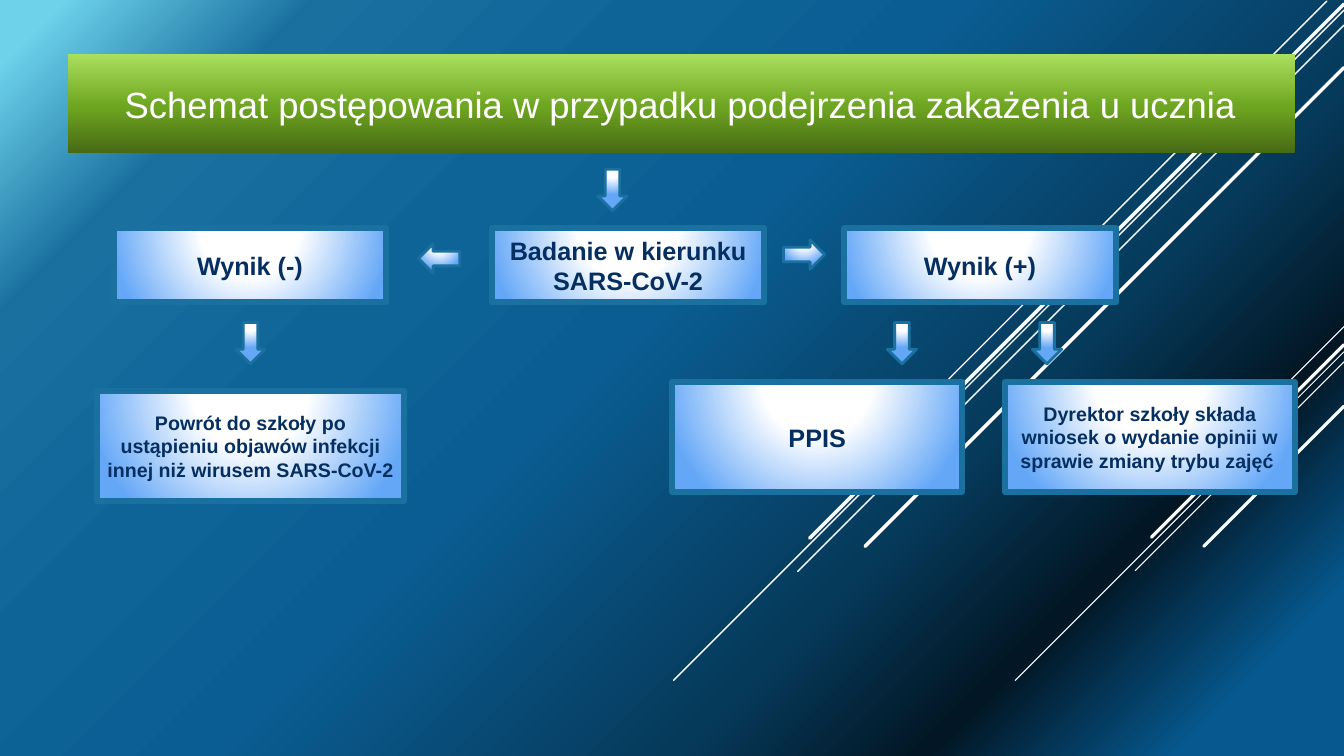
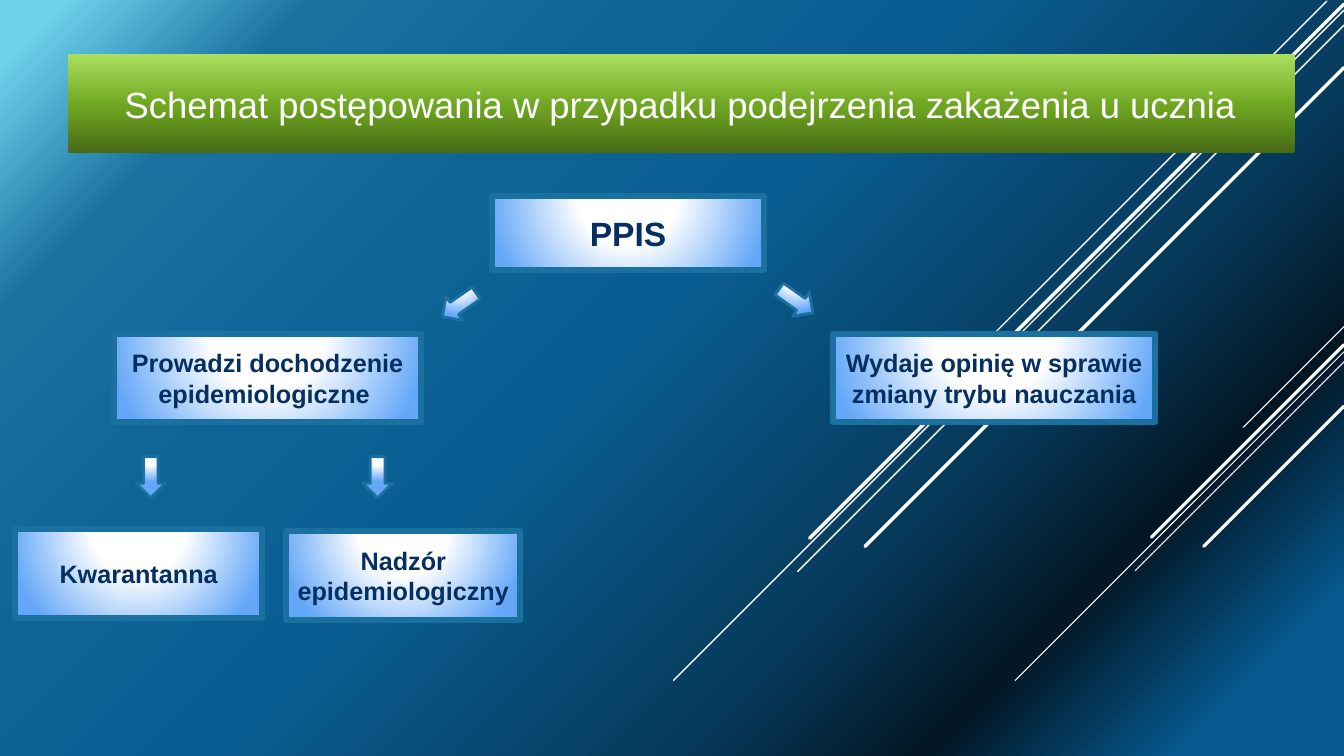
from lxml import etree
from pptx import Presentation
from pptx.dml.color import RGBColor
from pptx.enum.shapes import MSO_CONNECTOR, MSO_SHAPE
from pptx.enum.text import MSO_ANCHOR, MSO_AUTO_SIZE, PP_ALIGN
from pptx.oxml import parse_xml
from pptx.oxml.ns import nsdecls, qn
from pptx.util import Inches, Pt

STRAIGHT = MSO_CONNECTOR.STRAIGHT
RECTANGLE = MSO_SHAPE.RECTANGLE
RIGHT_ARROW = MSO_SHAPE.RIGHT_ARROW
MIDDLE = MSO_ANCHOR.MIDDLE
NO_AUTOFIT = MSO_AUTO_SIZE.NONE
CENTER = PP_ALIGN.CENTER

FONT = "Arial"
COLORS = {"white": "FFFFFF", "navy": "052F61", "border": "1A71A0"}
BACKGROUND_STOPS = [(8, "06588E"), (20, "021624"), (32, "063A5B"), (54, "0A5D92"),
                    (68, "0F6497"), (85, "1A71A0"), (97, "6ED2EB")]
BOX_STOPS = [(0, "FFFFFF"), (35, "FFFFFF"), (100, "64A7F7")]
TITLE_STOPS = [(0, "476A15"), (48, "6FA621"), (100, "AADF5E")]
TITLE = "Schemat postępowania w przypadku podejrzenia zakażenia u ucznia"
RIGHT, DOWN, LEFT = 0, 90, 180

STRIPES = [
    (13.33, 3.24, 1, 0.75), (13.33, 3.49, 3.26, 0.75), (13.33, 3.59, 2.07, 0.75),
    (13.33, 3.42, 1.91, 2.25), (13.33, 4.03, 1.39, 2.25),
    (13.16, 0.01, 4.16, 1), (13.33, 0.1, 6.65, 1), (13.33, 0.25, 5.42, 1),
    (13.33, 0.04, 5.3, 2.5), (13.33, 0.67, 4.75, 2.5),
]

TEST_BOXES = [
    ("Badanie w kierunku SARS-CoV-2", 4.88, 2.26, 2.7, 0.74, 18),
    ("Wynik (+)", 8.37, 2.26, 2.7, 0.74, 18),
    ("Wynik (-)", 1.13, 2.26, 2.7, 0.74, 18),
    ("Powrót do szkoły po ustąpieniu objawów infekcji innej niż wirusem SARS-CoV-2",
     0.96, 3.88, 3.05, 1.09, 14),
    ("Dyrektor szkoły składa wniosek o wydanie opinii w sprawie zmiany trybu zajęć ",
     9.97, 3.79, 2.87, 1.09, 14),
    ("PPIS", 6.67, 3.79, 2.87, 1.09, 18),
]
TEST_ARROWS = [(5.87, 1.74, DOWN), (4.15, 2.42, LEFT), (7.77, 2.38, RIGHT),
               (2.28, 3.26, DOWN), (8.74, 3.26, DOWN), (10.18, 3.26, DOWN)]

INSPECTION_BOXES = [
    ("PPIS", 4.88, 1.94, 2.7, 0.74, 24),
    ("Prowadzi dochodzenie epidemiologiczne ", 1.13, 3.31, 3.05, 0.88, 18),
    ("Wydaje opinię w sprawie zmiany trybu nauczania", 8.26, 3.31, 3.2, 0.88, 18),
    ("Kwarantanna", 0.15, 5.25, 2.45, 0.88, 18),
    ("Nadzór epidemiologiczny", 2.84, 5.27, 2.32, 0.88, 18),
]
INSPECTION_ARROWS = [(4.35, 2.88, 145.1), (7.69, 2.84, 35.2),
                     (1.29, 4.59, DOWN), (3.54, 4.59, DOWN)]


def color(name):
    return RGBColor.from_string(COLORS[name])


def linear(degrees):
    return f'<a:lin ang="{degrees * 60000}" scaled="0"/>'


def radial(left, top, right, bottom):
    return (f'<a:path path="circle"><a:fillToRect l="{left * 1000}" t="{top * 1000}" '
            f'r="{right * 1000}" b="{bottom * 1000}"/></a:path>')


def set_gradient(fill, properties, stops, shade):
    fill.solid()
    marks = "".join(f'<a:gs pos="{position * 1000}"><a:srgbClr val="{value}"/></a:gs>'
                    for position, value in stops)
    gradient = parse_xml(f'<a:gradFill {nsdecls("a")} rotWithShape="0">'
                         f'<a:gsLst>{marks}</a:gsLst>{shade}</a:gradFill>')
    properties.replace(properties.find(qn("a:solidFill")), gradient)


def write_text(shape, text, size, color_name, bold):
    frame = shape.text_frame
    frame.word_wrap = True
    frame.auto_size = NO_AUTOFIT
    frame.vertical_anchor = MIDDLE
    frame.margin_left = frame.margin_right = Inches(0.08)
    para = frame.paragraphs[0]
    para.alignment = CENTER
    span = para.add_run()
    span.text = text
    span.font.name = FONT
    span.font.size = Pt(size)
    span.font.bold = bold
    span.font.color.rgb = color(color_name)


def style_master(master):
    background = master.background.fill
    background.solid()
    set_gradient(background, master.element.find(".//" + qn("p:bgPr")),
                 BACKGROUND_STOPS, radial(100, 100, 0, 0))


def add_stripes(page, master):
    for x, y, reach, width in STRIPES:
        stripe = page.shapes.add_connector(STRAIGHT, Inches(x), Inches(y),
                                           Inches(x - reach), Inches(y + reach))
        stripe.line.color.rgb = color("white")
        stripe.line.width = Pt(width)
        properties = stripe.element.spPr
        properties.find(qn("a:ln")).set("cap", "rnd")
        etree.SubElement(properties, qn("a:effectLst"))
        master.shapes.element.append(stripe.element)


def add_title(page):
    title = page.shapes.title
    title.left, title.top = Inches(0.67), Inches(0.54)
    title.width, title.height = Inches(12.17), Inches(0.98)
    properties = title.element.spPr
    outline = etree.SubElement(properties, qn("a:prstGeom"), prst="roundRect")
    etree.SubElement(outline, qn("a:avLst"))
    set_gradient(title.fill, properties, TITLE_STOPS, linear(270))
    write_text(title, TITLE, 26, "white", False)


def add_glossy_shape(page, preset, left, top, width, height, border):
    shape = page.shapes.add_shape(preset, Inches(left), Inches(top),
                                  Inches(width), Inches(height))
    shape.shadow.inherit = False
    set_gradient(shape.fill, shape.element.spPr, BOX_STOPS, radial(50, -80, 50, 180))
    shape.line.color.rgb = color("border")
    shape.line.width = Pt(border)
    return shape


def add_box(page, text, left, top, width, height, size):
    box = add_glossy_shape(page, RECTANGLE, left, top, width, height, 4.25)
    write_text(box, text, size, "navy", True)


def add_arrow(page, left, top, rotation):
    arrow = add_glossy_shape(page, RIGHT_ARROW, left, top, 0.41, 0.29, 2)
    arrow.rotation = rotation


def add_scheme(deck, boxes, arrows):
    page = deck.slides.add_slide(deck.slide_layouts[5])
    add_title(page)
    for arrow in arrows:
        add_arrow(page, *arrow)
    for box in boxes:
        add_box(page, *box)
    return page


def main():
    deck = Presentation()
    deck.slide_width, deck.slide_height = Inches(13.33), Inches(7.5)
    style_master(deck.slide_master)
    page = add_scheme(deck, TEST_BOXES, TEST_ARROWS)
    add_stripes(page, deck.slide_master)
    add_scheme(deck, INSPECTION_BOXES, INSPECTION_ARROWS)
    deck.save("out.pptx")


if __name__ == "__main__":
    main()
